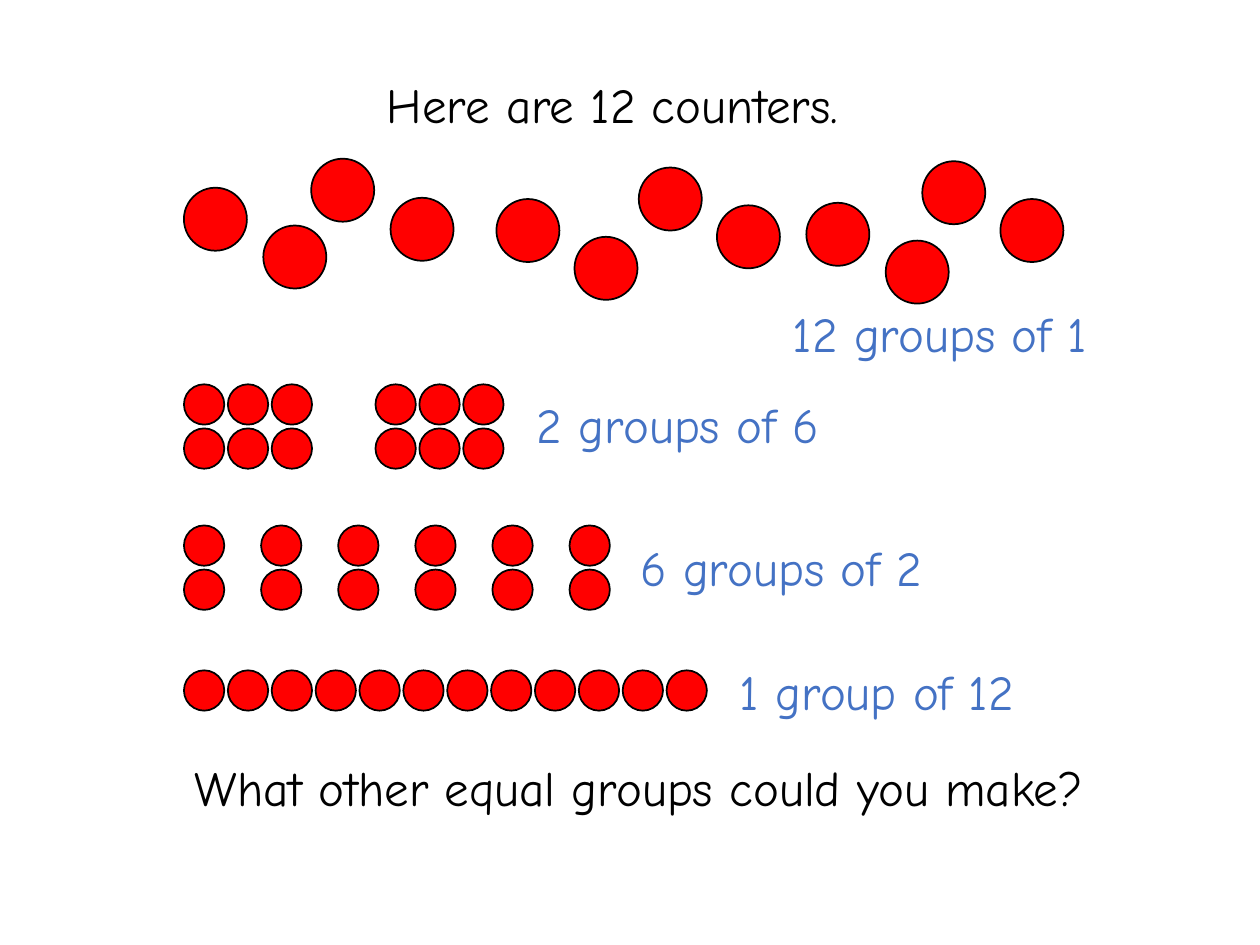
from pptx import Presentation
from pptx.dml.color import RGBColor
from pptx.enum import shapes, text
from pptx.util import Inches, Pt

FONT = "Comic Neue"
BLACK, RED, BLUE = "000000", "FF0000", "4472C4"
LEFT = 1.46
LARGE, SMALL = 0.5, 0.32
COLUMN_STEP = 3.83 / 11  # twelve touching counters span 3.83 between first and last
ROW_STEP = 0.35

SCATTERED = [
    (1.46, 1.49), (2.09, 1.79), (2.47, 1.26), (3.1, 1.57),
    (3.94, 1.58), (4.56, 1.88), (5.07, 1.33), (5.69, 1.63),
    (6.4, 1.61), (7.03, 1.91), (7.32, 1.28), (7.94, 1.58),
]
# top, number of groups, step between groups, columns and rows in a group
ARRANGEMENTS = [
    (3.05, 2, 1.52, 3, 2),
    (4.17, 6, 3.06 / 5, 1, 2),
    (5.32, 1, 0, 12, 1),
]
SENTENCES = [
    ("Here are 12 counters.", 0.76, 0.54),
    ("What other equal groups could you make?", 0.97, 5.96),
]
LABELS = [
    ("12 groups of 1", 5.96, 2.36),
    ("2 groups of 6", 3.88, 3.08),
    ("6 groups of 2", 4.7, 4.22),
    ("1 group of 12", 5.46, 5.2),
]


def rgb(value):
    return RGBColor.from_string(value)


def add_text(s, content, left, top, width, color):
    box = s.shapes.add_textbox(Inches(left), Inches(top), Inches(width), Inches(0.57))
    tf = box.text_frame
    tf.word_wrap = True
    tf.auto_size = text.MSO_AUTO_SIZE.SHAPE_TO_FIT_TEXT
    p = tf.paragraphs[0]
    p.text = content
    p.alignment = text.PP_ALIGN.CENTER
    p.font.name = FONT
    p.font.size = Pt(28)
    p.font.color.rgb = rgb(color)


def add_counter(s, left, top, size):
    sp = s.shapes.add_shape(shapes.MSO_SHAPE.OVAL, Inches(left), Inches(top),
                            Inches(size), Inches(size))
    sp.shadow.inherit = False
    sp.fill.solid()
    sp.fill.fore_color.rgb = rgb(RED)
    sp.line.color.rgb = rgb(BLACK)
    sp.line.width = Pt(1)


def add_groups(s, top, groups, group_step, columns, rows):
    """Draw equal groups of small counters side by side."""
    for group in range(groups):
        for row in range(rows):
            for column in range(columns):
                left = LEFT + group * group_step + column * COLUMN_STEP
                add_counter(s, left, top + row * ROW_STEP, SMALL)


def main():
    prs = Presentation()
    prs.slide_width, prs.slide_height = Inches(10), Inches(7.5)
    s = prs.slides.add_slide(prs.slide_layouts[6])
    for left, top in SCATTERED:
        add_counter(s, left, top, LARGE)
    for arrangement in ARRANGEMENTS:
        add_groups(s, *arrangement)
    for content, left, top in SENTENCES:
        add_text(s, content, left, top, 8.2, BLACK)
    for content, left, top in LABELS:
        add_text(s, content, left, top, 3, BLUE)
    prs.save("out.pptx")


if __name__ == "__main__":
    main()
